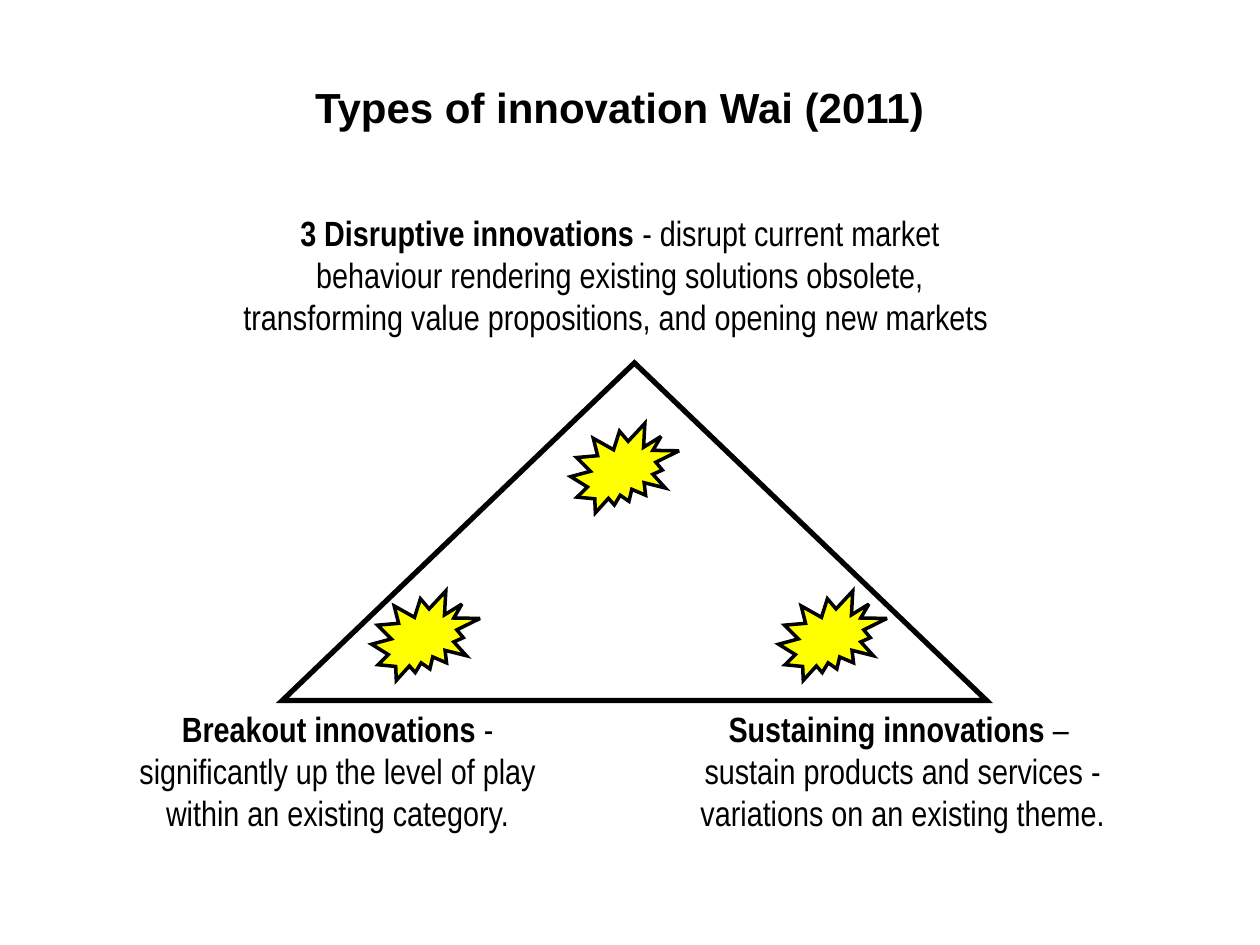
from lxml import etree
from pptx import Presentation
from pptx.dml.color import RGBColor
from pptx.enum.shapes import MSO_SHAPE
from pptx.enum.text import MSO_ANCHOR, MSO_AUTO_SIZE, PP_ALIGN
from pptx.oxml.ns import qn
from pptx.util import Inches, Pt

TRIANGLE = MSO_SHAPE.ISOSCELES_TRIANGLE
BURST = MSO_SHAPE.EXPLOSION2
MIDDLE = MSO_ANCHOR.MIDDLE
LEFT, CENTER = PP_ALIGN.LEFT, PP_ALIGN.CENTER
NO_FIT = MSO_AUTO_SIZE.NONE
BLACK, YELLOW = "000000", "FFFF00"


def color(code):
    return RGBColor.from_string(code)


def outline(kind, left, top, width, height, weight):
    """Add a preset shape with a black, sharp-cornered outline."""
    shape = slide.shapes.add_shape(
        kind, Inches(left), Inches(top), Inches(width), Inches(height))
    shape.shadow.inherit = False
    shape.line.color.rgb = color(BLACK)
    shape.line.width = Pt(weight)
    miter = etree.SubElement(shape.line._get_or_add_ln(), qn("a:miter"))
    miter.set("lim", "800000")
    return shape


prs = Presentation()
prs.slide_width, prs.slide_height = Inches(10), Inches(7.5)
slide = prs.slides.add_slide(prs.slide_layouts[5])

# Title
title = slide.shapes.title
title.left, title.top = Inches(2.4), Inches(0.6)
title.width, title.height = Inches(5.08), Inches(0.5)
frame = title.text_frame
frame.word_wrap = False
frame.auto_size = NO_FIT
frame.vertical_anchor = MIDDLE
par = frame.paragraphs[0]
par.alignment = LEFT
run = par.add_run()
run.text = "Types of innovation Wai (2011)"
run.font.name, run.font.size, run.font.bold = "Arial", Pt(24), True
run.font.color.rgb = color(BLACK)

# Triangle
outline(TRIANGLE, 2.24, 2.88, 5.59, 2.68, 3).fill.background()

# One note per corner: left, top, width, paragraphs of (text, bold) runs
notes = [
    (1.77, 1.62, 6.3, [
        [("3 Disruptive innovations", True),
         (" - disrupt current market behaviour rendering existing solutions "
          "obsolete, transforming value propositions, and opening new markets ",
          False)]]),
    (0.75, 5.56, 3.86, [
        [("Breakout innovations", True),
         (" - significantly up the level of play within an existing category.",
          False)]]),
    (5, 5.56, 4.33, [
        [("Sustaining innovations ", True), ("– ", False)],
        [("sustain products and services - variations on an existing theme.",
          False)]]),
]
for left, top, width, pars in notes:
    box = slide.shapes.add_textbox(
        Inches(left), Inches(top), Inches(width), Inches(1.11))
    frame = box.text_frame
    frame.word_wrap = True
    frame.vertical_anchor = MIDDLE
    for i, runs in enumerate(pars):
        par = frame.add_paragraph() if i else frame.paragraphs[0]
        par.alignment = CENTER
        for text, bold in runs:
            run = par.add_run()
            run.text = text
            run.font.name, run.font.size = "Arial Narrow", Pt(20)
            run.font.bold = bold
            run.font.color.rgb = color(BLACK)

# A burst in each corner of the triangle
for left, top in [(4.53, 3.36), (2.95, 4.69), (6.18, 4.69)]:
    burst = outline(BURST, left, top, 0.86, 0.71, 2)
    burst.fill.solid()
    burst.fill.fore_color.rgb = color(YELLOW)

prs.save("out.pptx")
